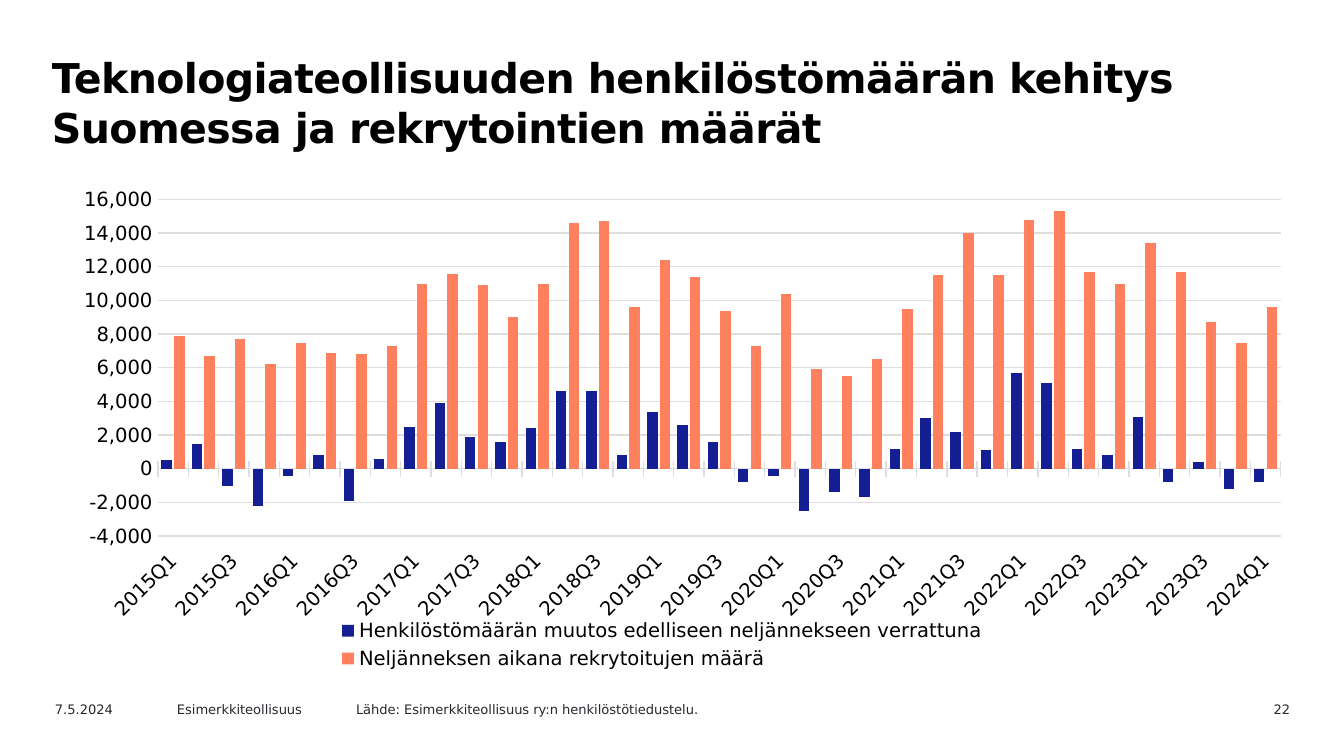
from lxml import etree
from pptx import Presentation
from pptx import util as u
from pptx.chart import data
from pptx.dml.color import RGBColor
from pptx.enum import chart as ch, text
from pptx.oxml import parse_xml
from pptx.oxml.ns import nsdecls

SCALE = 914400 / 134.4
FONT = "DejaVu Sans"
BLACK = RGBColor(0x00, 0x00, 0x00)
GREY = RGBColor(0x29, 0x28, 0x2E)
RULE = RGBColor(0xDE, 0xDD, 0xE1)
BLUE = RGBColor(0x14, 0x1F, 0x94)
CORAL = RGBColor(0xFF, 0x80, 0x5C)

QUARTERS = [f"{2015 + i // 4}Q{i % 4 + 1}" for i in range(37)]
CHANGE = [
    500, 1500, -1000, -2200, -400, 800, -1900, 600, 2500, 3900, 1900, 1600,
    2400, 4600, 4600, 800, 3400, 2600, 1600, -800, -400, -2500, -1400, -1700,
    1200, 3000, 2200, 1100, 5700, 5100, 1200, 800, 3100, -800, 400, -1200,
    -800]
HIRED = [
    7900, 6700, 7700, 6200, 7500, 6900, 6800, 7300, 11000, 11600, 10900, 9000,
    11000, 14600, 14700, 9600, 12400, 11400, 9400, 7300, 10400, 5900, 5500,
    6500, 9500, 11500, 14000, 11500, 14800, 15300, 11700, 11000, 13400, 11700,
    8700, 7500, 9600]
SERIES = [
    ("Henkilöstömäärän muutos edelliseen neljännekseen verrattuna", CHANGE,
     BLUE),
    ("Neljänneksen aikana rekrytoitujen määrä", HIRED, CORAL)]


def px(n):
    return u.Emu(round(n * SCALE))


def style(font, size, color, bold=False):
    font.name = FONT
    font.size = u.Pt(size)
    font.bold = bold
    font.color.rgb = color


def add_text(slide, words, box, size=7, color=GREY, bold=False,
             align=text.PP_ALIGN.LEFT, top=7, line=None, track=None):
    """Add a text box; line is spacing in points, track is in 1/100 pt."""
    frame = slide.shapes.add_textbox(*map(px, box)).text_frame
    frame.word_wrap = True
    frame.margin_left = frame.margin_right = px(13)
    frame.margin_top, frame.margin_bottom = px(top), 0
    para = frame.paragraphs[0]
    para.alignment = align
    if line:
        para.line_spacing = u.Pt(line)
    run = para.add_run()
    run.text = words
    style(run.font, size, color, bold)
    if track:
        run.font._element.set("spc", str(track))


def set_plot(chart, x, y, w, h):
    """Fix the inner plot area, as fractions of the chart."""
    area = chart._chartSpace.chart.plotArea
    for old in area.findall("{*}layout"):
        area.remove(old)
    layout = parse_xml(
        f'<c:layout {nsdecls("c")}><c:manualLayout>'
        '<c:layoutTarget val="inner"/>'
        '<c:xMode val="edge"/><c:yMode val="edge"/>'
        f'<c:x val="{x}"/><c:y val="{y}"/><c:w val="{w}"/><c:h val="{h}"/>'
        '</c:manualLayout></c:layout>')
    area.insert(0, layout)


def set_line(line):
    line.color.rgb = RULE
    line.width = u.Pt(0.75)


def set_axes(chart):
    cat, val = chart.category_axis, chart.value_axis
    for axis in (cat, val):
        style(axis.tick_labels.font, 10.5, BLACK)
        axis.minor_tick_mark = ch.XL_TICK_MARK.NONE
    cat.tick_label_position = ch.XL_TICK_LABEL_POSITION.LOW
    cat.major_tick_mark = ch.XL_TICK_MARK.CROSS
    cat.has_major_gridlines = False
    set_line(cat.format.line)
    body = cat._element.find("{*}txPr/{*}bodyPr")
    body.set("rot", "-2700000")
    val.minimum_scale, val.maximum_scale = -4000, 16000
    val.major_unit = 2000
    val.major_tick_mark = ch.XL_TICK_MARK.NONE
    val.tick_labels.number_format = "#,##0"
    val.tick_labels.number_format_is_linked = False
    val.format.line.fill.background()
    set_line(val.major_gridlines.format.line)


def add_chart(slide, box):
    source = data.CategoryChartData(number_format="#,##0")
    source.categories = QUARTERS
    for name, vals, _ in SERIES:
        source.add_series(name, vals)
    chart = slide.shapes.add_chart(
        ch.XL_CHART_TYPE.COLUMN_CLUSTERED, *map(px, box), source).chart
    style(chart.font, 10, GREY)
    chart.has_title = False
    chart.has_legend = True
    chart.legend.position = ch.XL_LEGEND_POSITION.BOTTOM
    chart.legend.include_in_layout = False
    style(chart.legend.font, 10.5, BLACK)
    plot = chart.plots[0]
    plot.gap_width, plot.overlap = 70, -21
    plot.vary_by_categories = False
    for bars, (_, _, color) in zip(plot.series, SERIES):
        bars.invert_if_negative = False
        bars.format.fill.solid()
        bars.format.fill.fore_color.rgb = color
    set_axes(chart)
    set_plot(chart, 0.096, 0.064, 0.899, 0.663)


def main():
    deck = Presentation()
    deck.slide_width, deck.slide_height = px(1344), px(756)
    slide = deck.slides.add_slide(deck.slide_layouts[6])
    add_text(slide, "Teknologiateollisuuden henkilöstömäärän kehitys "
             "Suomessa ja rekrytointien määrät", (39, 42, 1175, 95),
             size=22, color=BLACK, bold=True, top=9, line=27, track=-30)
    add_chart(slide, (38, 167, 1249, 508))
    for words, left, width in [
            ("7.5.2024", 42, 134),
            ("Esimerkkiteollisuus", 164, 191),
            ("Lähde: Esimerkkiteollisuus ry:n henkilöstötiedustelu.",
             343, 437)]:
        add_text(slide, words, (left, 695, width, 24))
    add_text(slide, "22", (1177, 695, 126, 24), align=text.PP_ALIGN.RIGHT)
    deck.save("out.pptx")


if __name__ == "__main__":
    main()
